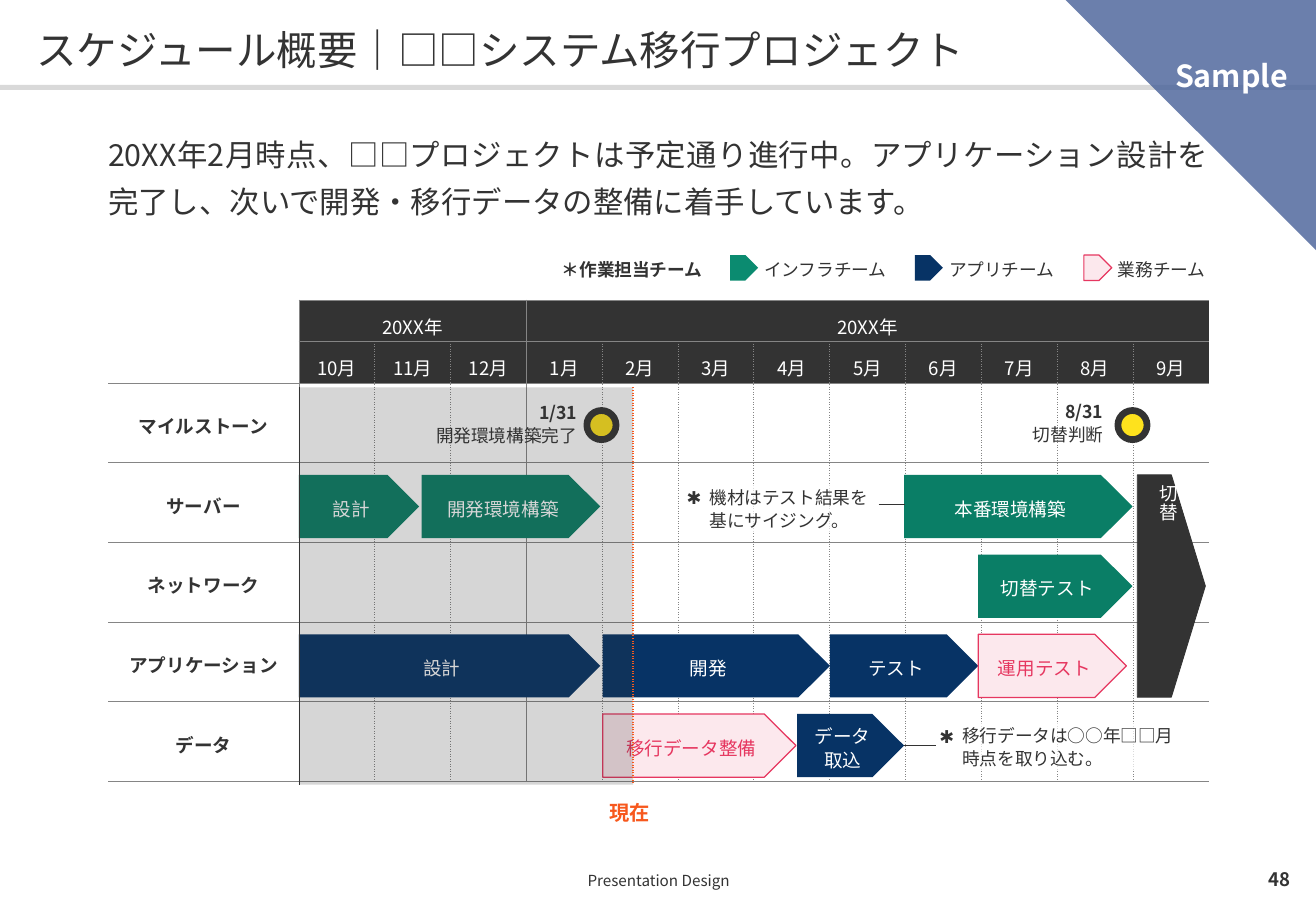
import pptx
import pptx.dml.color
import pptx.enum.shapes
import pptx.enum.text
import pptx.oxml
import pptx.oxml.ns
import pptx.util
from lxml import etree

Inches = pptx.util.Inches
Pt = pptx.util.Pt
RGBColor = pptx.dml.color.RGBColor
Shape = pptx.enum.shapes.MSO_SHAPE
Align = pptx.enum.text.PP_ALIGN
Anchor = pptx.enum.text.MSO_ANCHOR
qn = pptx.oxml.ns.qn

FONT = "Noto Sans CJK JP"
INK = RGBColor(0x33, 0x33, 0x33)
WHITE = RGBColor(0xFF, 0xFF, 0xFF)
RULE = RGBColor(0xD9, 0xD9, 0xD9)
GRID = RGBColor(0x85, 0x85, 0x85)
LEGEND_GREEN = RGBColor(0x0B, 0x8B, 0x70)
GREEN = RGBColor(0x0A, 0x7E, 0x66)
NAVY = RGBColor(0x07, 0x33, 0x65)
PINK = RGBColor(0xFC, 0xE8, 0xED)
RED = RGBColor(0xE6, 0x37, 0x60)
ORANGE = RGBColor(0xF7, 0x58, 0x1D)
YELLOW = RGBColor(0xFE, 0xE2, 0x1D)
RIBBON = RGBColor(0x46, 0x60, 0x98)
NO_STYLE = "{2D5ABB26-0587-4C30-8999-92F81FD0307C}"

CHART_LEFT, CHART_TOP = 0.89, 2.47
LABEL_WIDTH, MONTH_WIDTH = 1.57, 7.49 / 12
HEADER_HEIGHT, ROW_HEIGHT = 0.67 / 2, 3.28 / 5
BAR_TOP, BAR_HEIGHT = 3.91, 0.52
BAR_INSETS = (0.08, 0.08, 0.08, 0.06)
MONTHS = [f"{(month + 9) % 12 + 1}月" for month in range(12)]
WORK_AREAS = ["マイルストーン", "サーバー", "ネットワーク", "アプリケーション", "データ"]
LEGEND = [
    (6.01, "インフラチーム", LEGEND_GREEN, None),
    (7.53, "アプリチーム", NAVY, None),
    (8.92, "業務チーム", PINK, RED),
]
TASKS = [
    (0, 2.46, 0.99, "設計", GREEN),
    (0, 3.47, 1.47, "開発環境構築", GREEN),
    (0, 7.44, 1.88, "本番環境構築", GREEN),
    (1, 8.05, 1.27, "切替テスト", GREEN),
    (2, 2.46, 2.48, "設計", NAVY),
    (2, 4.96, 1.87, "開発", NAVY),
    (2, 6.83, 1.22, "テスト", NAVY),
    (2, 8.05, 1.22, "運用テスト", PINK),
    (3, 4.96, 1.59, "移行データ整備", PINK),
    (3, 6.56, 0.88, "データ\n取込", NAVY),
]


def write_text(frame, text, size=10.5, color=INK, bold=False, rest_bold=None,
               align=Align.LEFT, spacing=1.1, bullet=None):
    """Write each line of text as a formatted paragraph."""
    for index, line in enumerate(text.split("\n")):
        paragraph = frame.add_paragraph() if index else frame.paragraphs[0]
        paragraph.alignment = align
        paragraph.line_spacing = spacing
        if bullet:
            properties = paragraph._p.get_or_add_pPr()
            properties.set("marL", str(Inches(0.19)))
            properties.set("indent", str(-Inches(0.19)))
            etree.SubElement(properties, qn("a:buFont")).set("typeface", FONT)
            etree.SubElement(properties, qn("a:buChar")).set("char", bullet)
        run = paragraph.add_run()
        run.text = line
        run.font.size = Pt(size)
        run.font.bold = rest_bold if index and rest_bold is not None else bold
        run.font.color.rgb = color
        run.font.name = FONT
        etree.SubElement(run._r.get_or_add_rPr(), qn("a:ea")).set("typeface", FONT)


def set_frame(frame, insets=(0, 0, 0, 0), anchor=Anchor.TOP, wrap=True):
    """Set the margins, anchor and wrapping of a text frame."""
    frame.margin_left, frame.margin_top, frame.margin_right, frame.margin_bottom = map(Inches, insets)
    frame.vertical_anchor = anchor
    frame.word_wrap = wrap


def paint(fill, color, opacity=100):
    """Apply a solid fill with the given opacity in percent."""
    fill.solid()
    fill.fore_color.rgb = color
    if opacity < 100:
        shade = fill._xPr.find(qn("a:solidFill"))[0]
        etree.SubElement(shade, qn("a:alpha")).set("val", str(opacity * 1000))


def add_text(slide, box, text, anchor=Anchor.TOP, opacity=0, **style):
    """Add a text box, on a translucent white ground if asked."""
    label = slide.shapes.add_textbox(*map(Inches, box))
    set_frame(label.text_frame, anchor=anchor)
    if opacity:
        paint(label.fill, WHITE, opacity)
    write_text(label.text_frame, text, **style)


def add_figure(slide, kind, box, color, outline=None, weight=0.75):
    """Add a filled preset shape and return it."""
    figure = slide.shapes.add_shape(kind, *map(Inches, box))
    figure.shadow.inherit = False
    paint(figure.fill, color)
    if outline is None:
        figure.line.fill.background()
    else:
        figure.line.color.rgb = outline
        figure.line.width = Pt(weight)
    return figure


def add_task(slide, row, left, width, text, color):
    """Add a task arrow in its work-area row."""
    box = (left, BAR_TOP + row * ROW_HEIGHT, width, BAR_HEIGHT)
    accent = RED if color == PINK else None
    task = add_figure(slide, Shape.PENTAGON, box, color, accent)
    set_frame(task.text_frame, BAR_INSETS, Anchor.MIDDLE)
    write_text(task.text_frame, text, size=11, color=accent or WHITE, align=Align.CENTER)


def add_leader(slide, start, end, y):
    """Add a thin horizontal line from a task to its note."""
    leader = slide.shapes.add_connector(
        pptx.enum.shapes.MSO_CONNECTOR.STRAIGHT, Inches(start), Inches(y), Inches(end), Inches(y))
    leader.line.color.rgb = INK
    leader.line.width = Pt(0.5)
    etree.SubElement(leader._element.spPr, qn("a:effectLst"))


def add_border(cell, side, color=GRID, weight=0.5, dash="solid"):
    """Add one border to a cell; call in the order L, R, T, B."""
    border = etree.SubElement(cell._tc.get_or_add_tcPr(), qn("a:ln" + side), w=str(Pt(weight)))
    solid = etree.SubElement(border, qn("a:solidFill"))
    etree.SubElement(solid, qn("a:srgbClr")).set("val", str(color))
    etree.SubElement(border, qn("a:prstDash")).set("val", dash)


def add_grid(slide, left, top, widths, heights):
    """Add an unstyled table with the given column widths and row heights."""
    frame = slide.shapes.add_table(
        len(heights), len(widths), Inches(left), Inches(top), Inches(sum(widths)), Inches(sum(heights)))
    table = frame.table
    table.first_row = table.horz_banding = False
    table._tbl.tblPr.find(qn("a:tableStyleId")).text = NO_STYLE
    for column, width in zip(table.columns, widths):
        column.width = Inches(width)
    for row, height in zip(table.rows, heights):
        row.height = Inches(height)
    return table


def add_schedule(slide):
    """Add the month grid with its headers and work areas."""
    table = add_grid(slide, CHART_LEFT, CHART_TOP, [LABEL_WIDTH] + [MONTH_WIDTH] * 12,
                     [HEADER_HEIGHT] * 2 + [ROW_HEIGHT] * 5)
    table.cell(0, 1).merge(table.cell(0, 3))
    table.cell(0, 4).merge(table.cell(0, 12))
    texts = {(0, 1): "20XX年", (0, 4): "20XX年"}
    texts.update({(1, column): month for column, month in enumerate(MONTHS, 1)})
    texts.update({(row, 0): area for row, area in enumerate(WORK_AREAS, 2)})
    for row in range(7):
        for column in range(13):
            cell = table.cell(row, column)
            for side, edge in (("L", column), ("R", column + 1)):
                if edge in (1, 4) or (row and 0 < edge < 13):
                    add_border(cell, side, dash="solid" if edge in (1, 4) else "dot")
            for side, edge in (("T", row), ("B", row + 1)):
                if column or edge > 1:
                    add_border(cell, side)
            if row < 2 and column:
                paint(cell.fill, INK)
            cell.vertical_anchor = Anchor.MIDDLE
            cell.margin_top, cell.margin_bottom = Inches(0.08), Inches(0.06)
            if (row, column) in texts:
                write_text(cell.text_frame, texts[row, column], size=11, bold=column == 0,
                           color=WHITE if column else INK, align=Align.CENTER)
            else:
                cell.text_frame.paragraphs[0]._p.get_or_add_endParaRPr().set("sz", "1000")


def add_elapsed_period(slide):
    """Shade the elapsed months up to the current date."""
    elapsed = add_grid(slide, 2.46, 3.19, [2.75], [3.27]).cell(0, 0)
    add_border(elapsed, "L", INK)
    add_border(elapsed, "R", ORANGE, 1.5, "sysDot")
    paint(elapsed.fill, INK, 20)


def add_ribbon(slide):
    """Add the triangular corner ribbon."""
    outline = slide.shapes.build_freeform(Inches(8.77), 0)
    outline.add_line_segments([(Inches(10.83), 0), (Inches(10.83), Inches(2.06))], close=True)
    ribbon = outline.convert_to_shape()
    ribbon.shadow.inherit = False
    ribbon.line.fill.background()
    paint(ribbon.fill, RIBBON, 80)
    set_frame(ribbon.text_frame, (0.67, 0.47, 0, 0), wrap=False)
    write_text(ribbon.text_frame, "Sample", size=18, color=WHITE, bold=True, align=Align.CENTER, spacing=1.0)


def main():
    """Build the project schedule slide."""
    deck = pptx.Presentation()
    deck.slide_width, deck.slide_height = Inches(10.83), Inches(7.5)
    slide = deck.slides.add_slide(deck.slide_layouts[6])
    add_figure(slide, Shape.RECTANGLE, (0, 0.7, 10.83, 0.04), RULE)
    add_text(slide, (0.89, 7.1, 9.06, 0.29), "Presentation Design", size=9,
             align=Align.CENTER, anchor=Anchor.MIDDLE, spacing=1.0)
    add_text(slide, (10.1, 7.1, 0.52, 0.28), "48", size=11, bold=True,
             align=Align.RIGHT, anchor=Anchor.MIDDLE, spacing=1.0)
    add_text(slide, (0.3, 0.17, 10.24, 0.43), "スケジュール概要｜□□システム移行プロジェクト",
             size=24, anchor=Anchor.MIDDLE)
    for left, team, color, outline in LEGEND:
        add_figure(slide, Shape.PENTAGON, (left, 2.1, 0.23, 0.21), color, outline)
        add_text(slide, (left + 0.28, 2.11, 1.18, 0.19), team)
    add_text(slide, (4.55, 2.11, 1.23, 0.18), "＊作業担当チーム", bold=True, align=Align.RIGHT)
    add_schedule(slide)
    for task in TASKS:
        add_task(slide, *task)
    cutover = add_figure(slide, Shape.PENTAGON, (9.36, 3.91, 0.56, 1.83), INK, INK, 0.5)
    set_frame(cutover.text_frame, (0.16, 0.08, 0.08, 0.06), Anchor.MIDDLE)
    cutover.text_frame._txBody.bodyPr.set("vert", "eaVert")
    write_text(cutover.text_frame, "切替", size=11, color=WHITE, align=Align.CENTER, spacing=1.0)
    add_text(slide, (4.63, 6.53, 1.11, 0.25), "現在", size=12, color=ORANGE, bold=True,
             align=Align.CENTER, spacing=1.3, opacity=80)
    for left in (4.83, 9.2):
        add_figure(slide, Shape.OVAL, (left, 3.38, 0.24, 0.24), YELLOW, INK, 4)
    for box, milestone in (((8.46, 3.28, 0.62, 0.39), "8/31\n切替判断"),
                           ((3.39, 3.29, 1.36, 0.39), "1/31\n開発環境構築完了")):
        add_text(slide, box, milestone, bold=True, rest_bold=False, align=Align.RIGHT)
    for box, note in (((5.65, 3.99, 1.5, 0.39), "機材はテスト結果を基にサイジング。"),
                      ((7.73, 5.95, 1.94, 0.39), "移行データは○○年□□月時点を取り込む。")):
        add_text(slide, box, note, bullet="✱", opacity=70)
    add_leader(slide, 7.23, 7.45, 4.15)
    add_leader(slide, 7.44, 7.7, 6.14)
    add_elapsed_period(slide)
    add_text(slide, (0.89, 1.03, 9.06, 0.75),
             "20XX年2月時点、□□プロジェクトは予定通り進行中。アプリケーション設計を完了し、"
             "次いで開発・移行データの整備に着手しています。",
             size=18, align=Align.JUSTIFY, spacing=1.3)
    add_ribbon(slide)
    deck.save("out.pptx")


if __name__ == "__main__":
    main()
